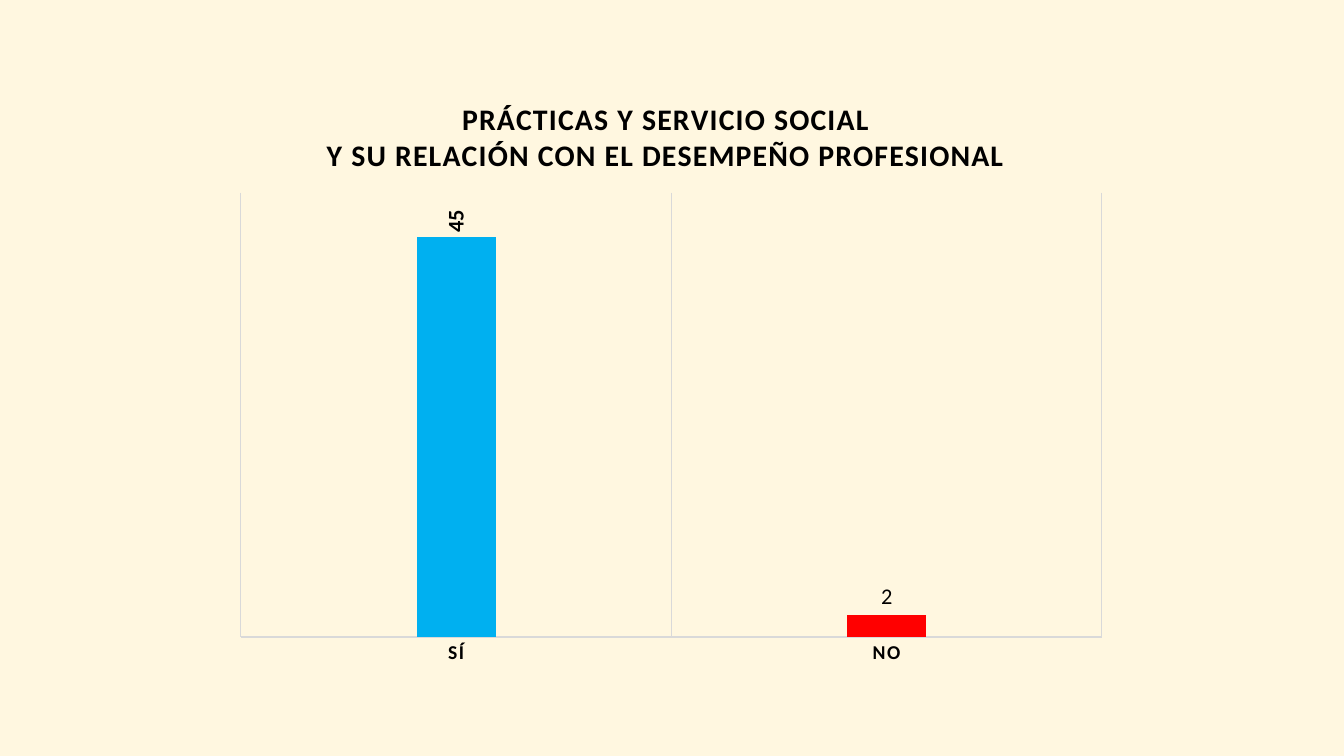
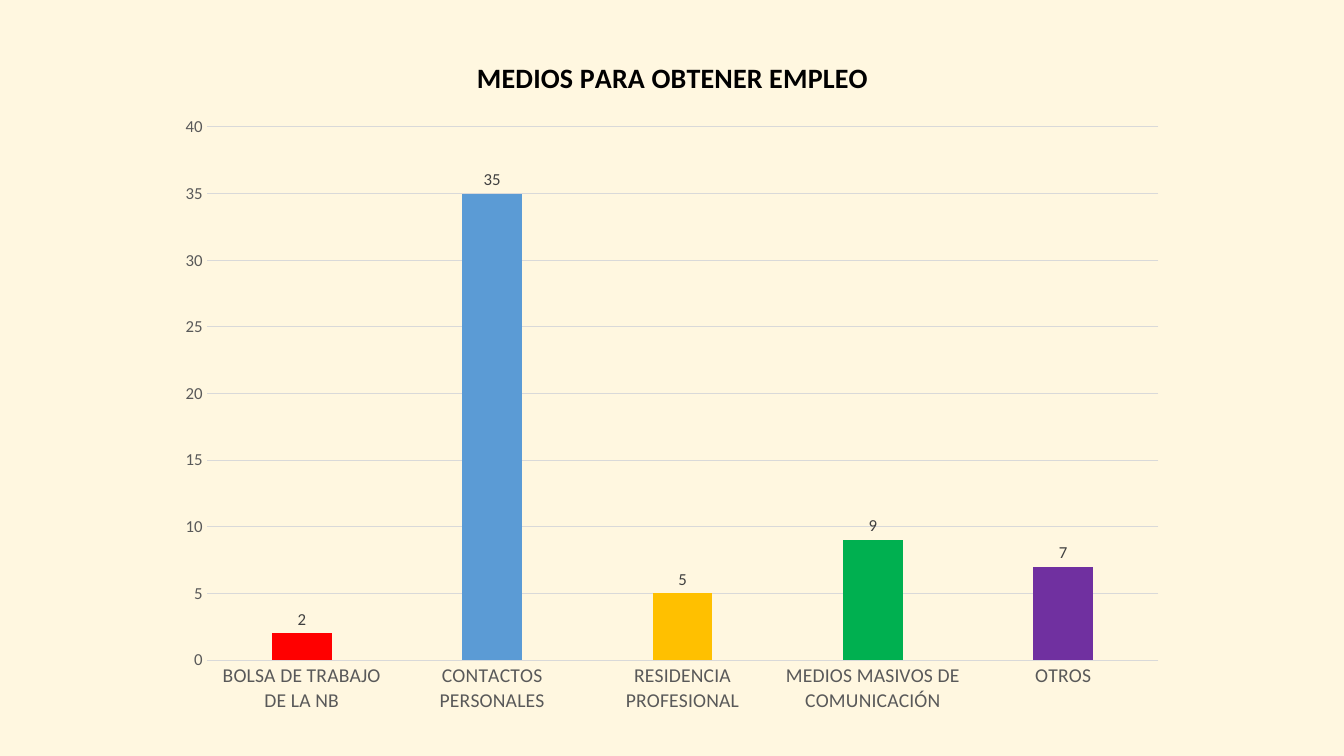
from lxml import etree
from pptx import Presentation
from pptx.chart.data import CategoryChartData
from pptx.dml.color import RGBColor
from pptx.enum.chart import XL_CHART_TYPE, XL_LABEL_POSITION, XL_TICK_MARK
from pptx.oxml.ns import qn
from pptx.util import Inches, Pt

COLUMN = XL_CHART_TYPE.COLUMN_CLUSTERED
OUT = XL_LABEL_POSITION.OUTSIDE_END
NO_TICK = XL_TICK_MARK.NONE
FACE = "Calibri"
HUES = {
    "cream": "FFF7E0", "black": "000000", "dark": "404040", "gray": "595959",
    "rule": "D9D9D9", "sky": "00B0F0", "blue": "5B9BD5", "red": "FF0000",
    "gold": "FFC000", "green": "00B050", "plum": "7030A0",
}


class Deck:
    """Shared style plus the current slide."""

    def __init__(self):
        self.show = Presentation()
        self.show.slide_width = Inches(13.33)
        self.show.slide_height = Inches(7.5)
        self.slide = None
        self.box = None

    def page(self):
        self.slide = self.show.slides.add_slide(self.show.slide_layouts[6])
        self.fill(self.slide.background, "cream")

    def fill(self, item, hue):
        item.fill.solid()
        item.fill.fore_color.rgb = RGBColor.from_string(HUES[hue])

    def font(self, font, size, hue="black", bold=False):
        font.name, font.size, font.bold = FACE, Pt(size), bold
        font.color.rgb = RGBColor.from_string(HUES[hue])

    def rule(self, item):
        item.format.line.width = Pt(0.75)
        item.format.line.color.rgb = RGBColor.from_string(HUES["rule"])

    def place(self, node, index, x, y, *size):
        """Set a manual layout from slide inches."""
        old = node.find(qn("c:layout"))
        if old is not None:
            node.remove(old)
        left, top, wide, high = self.box
        spots = {"xMode": "edge", "yMode": "edge",
                 "x": (x - left) / wide, "y": (y - top) / high}
        if size:
            spots = {"layoutTarget": "inner", **spots,
                     "w": size[0] / wide, "h": size[1] / high}
        layout = etree.Element(qn("c:layout"))
        manual = etree.SubElement(layout, qn("c:manualLayout"))
        for tag, val in spots.items():
            etree.SubElement(manual, qn("c:" + tag)).set("val", str(val))
        node.insert(index, layout)

    def chart(self, box, cats, vals, hues, gap, overlap, plot):
        self.box = box
        data = CategoryChartData()
        data.categories = cats
        data.add_series("Series 1", vals)
        frame = self.slide.shapes.add_chart(COLUMN, *map(Inches, box), data)
        chart = frame.chart
        chart.has_legend = False
        self.font(chart.font, 10)
        bars = chart.plots[0]
        bars.gap_width, bars.overlap = gap, overlap
        bars.vary_by_categories = False
        for i, hue in enumerate(hues):
            self.fill(bars.series[0].points[i].format, hue)
        self.place(chart._chartSpace.chart.plotArea, 0, *plot)
        return chart

    def title(self, chart, text, size, x, y, gap=0):
        title = chart.chart_title
        title.text_frame.text = text
        for para in title.text_frame.paragraphs:
            for run in para.runs:
                self.font(run.font, size, bold=True)
                run.font._element.set("spc", str(gap))
        title.include_in_layout = False
        self.place(title._element, 1, x, y)

    def axis(self, axis, size, hue, bold=False, gap=0):
        axis.major_tick_mark = axis.minor_tick_mark = NO_TICK
        self.font(axis.tick_labels.font, size, hue, bold)
        axis.tick_labels.font._element.set("spc", str(gap))
        self.rule(axis)

    def scale(self, axis, top, step):
        axis.minimum_scale, axis.maximum_scale = 0, top
        axis.major_unit = step

    def grid(self, axis):
        axis.has_major_gridlines = True
        self.rule(axis.major_gridlines)

    def labels(self, chart, size, hue, bold=False, turn=0):
        labels = chart.plots[0].series[0].data_labels
        labels.show_value = True
        labels.position = OUT
        self.font(labels.font, size, hue, bold)
        body = labels._element.find(qn("c:txPr")).find(qn("a:bodyPr"))
        body.set("rot", str(turn * 60000))
        body.set("vert", "horz")

    def label(self, chart, index, text, size):
        label = chart.plots[0].series[0].points[index].data_label
        label.text_frame.text = text
        self.font(label.text_frame.paragraphs[0].runs[0].font, size)
        label.position = OUT


def main():
    deck = Deck()

    # Internship and social service
    deck.page()
    chart = deck.chart((2.22, 0.79, 8.89, 5.93), ["SÍ", "NO"], [45, 2.5],
                       ["sky", "red"], 444, -90, (2.39, 1.91, 8.54, 4.41))
    deck.title(chart, "PRÁCTICAS Y SERVICIO SOCIAL\n"
               "Y SU RELACIÓN CON EL DESEMPEÑO PROFESIONAL",
               21.3, 3.21, 0.96, gap=100)
    deck.axis(chart.category_axis, 14, "black", bold=True, gap=100)
    deck.grid(chart.category_axis)
    deck.scale(chart.value_axis, 50, 10)
    chart.value_axis.has_major_gridlines = False
    chart.value_axis.visible = False
    deck.labels(chart, 16, "black", bold=True, turn=-90)
    deck.label(chart, 1, "2", 16)

    # Ways of finding a job
    deck.page()
    cats = ["BOLSA DE TRABAJO DE LA NB", "CONTACTOS PERSONALES",
            "RESIDENCIA PROFESIONAL", "MEDIOS MASIVOS DE COMUNICACIÓN", "OTROS"]
    chart = deck.chart((1.64, 0.32, 10.05, 6.88), cats, [2, 35, 5, 9, 7],
                       ["red", "blue", "gold", "green", "plum"], 219, -27,
                       (2.05, 1.26, 9.44, 5.29))
    deck.title(chart, "MEDIOS PARA OBTENER EMPLEO", 20, 4.68, 0.52)
    deck.axis(chart.category_axis, 14, "gray")
    deck.axis(chart.value_axis, 12, "gray")
    chart.value_axis.format.line.fill.background()
    deck.scale(chart.value_axis, 40, 5)
    deck.grid(chart.value_axis)
    deck.labels(chart, 12, "dark")

    deck.show.save("out.pptx")


if __name__ == "__main__":
    main()
